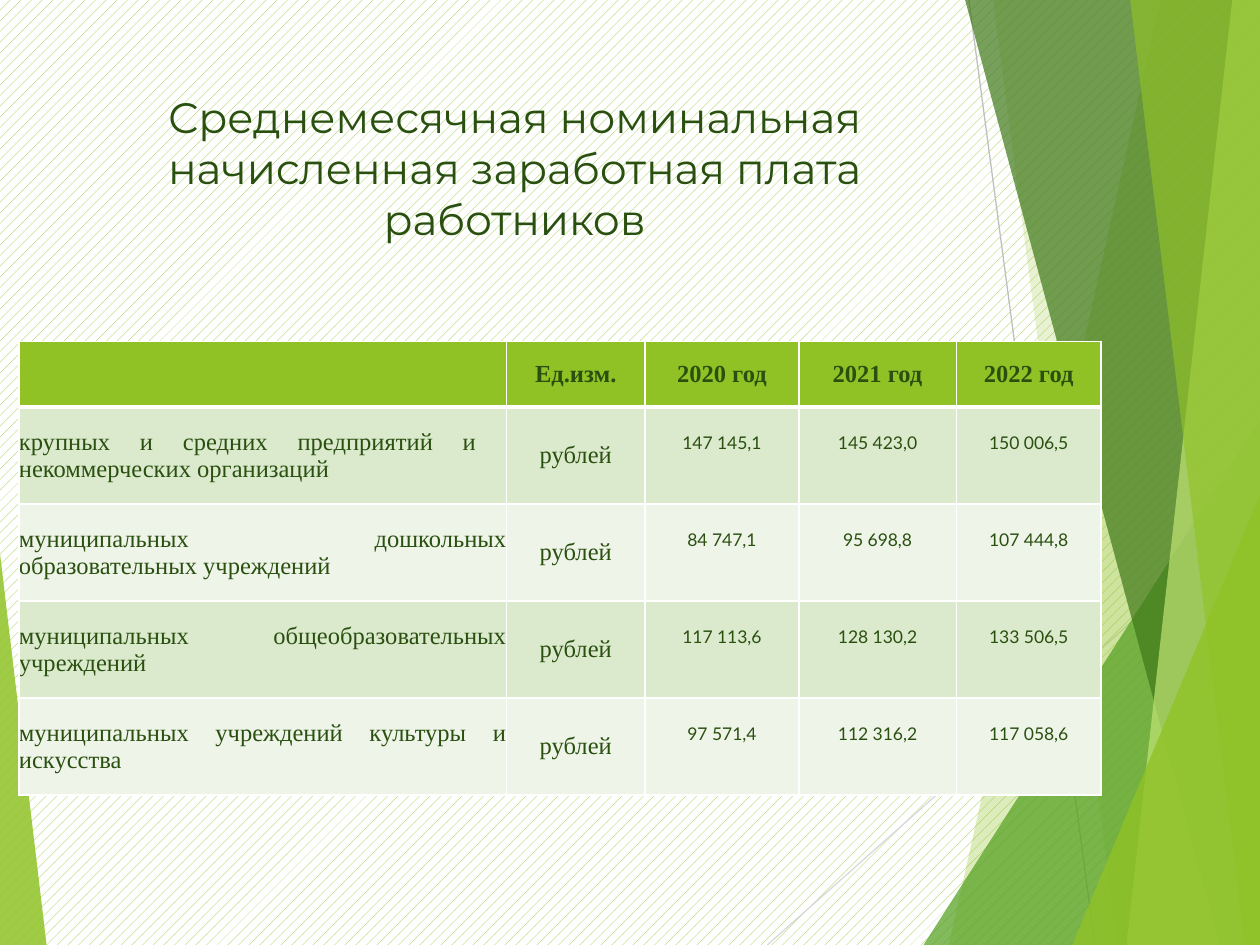
from dataclasses import dataclass

import pptx
import pptx.dml.color
import pptx.enum.dml
import pptx.enum.shapes
import pptx.enum.text
import pptx.oxml
import pptx.oxml.ns
import pptx.util
from pptx.util import Inches

ALIGN = pptx.enum.text.PP_ALIGN
ANCHOR = pptx.enum.text.MSO_ANCHOR
SERIF = "Times New Roman"
LIME, DARK_GREEN, WHITE = "90C226", "2A5010", "FFFFFF"
BAND_FILLS = ("DBE9CD", "EEF4E8")
SLIDE_WIDTH, SLIDE_HEIGHT = 10, 7.5


@dataclass
class Ray:
    start: tuple[float, float]
    end: tuple[float, float]
    color: str


@dataclass
class Panel:
    """A full-height facet reaching the right edge of the slide."""
    top_x: float
    bottom_x: float
    color: str
    opacity: int


@dataclass
class Wedge:
    """A right triangle standing on the bottom edge; apex 0 is left, 1 is right."""
    left: float
    top: float
    width: float
    apex: int
    color: str
    opacity: int


@dataclass
class WageRow:
    workers: str
    wages: tuple[str, str, str]
    right_inset: float = 0


DECOR = [
    Ray((7.69, 0), (8.69, 7.5), "BFBFBF"),
    Ray((10, 4.03), (6.09, 7.5), "D9D9D9"),
    Panel(9.21, 7.53, LIME, 30),
    Panel(7.88, 8.87, LIME, 20),
    Wedge(7.33, 3.33, 2.67, 1, "54A021", 72),
    Panel(7.66, 9.68, "3F7819", 70),
    Panel(9.78, 8.94, "C0E474", 70),
    Panel(8.97, 9.88, LIME, 65),
    Wedge(8.51, 3.93, 1.49, 1, LIME, 80),
    Wedge(0, 4.39, 0.37, 0, LIME, 85),
]

HEADINGS = ("", "Ед.изм.", "2020 год", "2021 год", "2022 год")
UNIT = "рублей"
COLUMN_WIDTHS = (3.87, 1.1, 1.22, 1.25, 1.15)
HEADER_HEIGHT, ROW_HEIGHT = 0.52, 0.77
WAGES = [
    WageRow("крупных и средних предприятий и некоммерческих организаций",
            ("147 145,1", "145 423,0", "150 006,5"), right_inset=0.24),
    WageRow("муниципальных дошкольных образовательных учреждений",
            ("84 747,1", "95 698,8", "107 444,8")),
    WageRow("муниципальных общеобразовательных учреждений",
            ("117 113,6", "128 130,2", "133 506,5")),
    WageRow("муниципальных учреждений культуры и искусства",
            ("97 571,4", "112 316,2", "117 058,6")),
]


def rgb(color: str) -> pptx.dml.color.RGBColor:
    return pptx.dml.color.RGBColor.from_string(color)


def paint(shape, color: str, opacity: int) -> None:
    shape.shadow.inherit = False
    shape.line.fill.background()
    shape.fill.solid()
    shape.fill.fore_color.rgb = rgb(color)
    srgb = shape.fill._xPr.find(".//" + pptx.oxml.ns.qn("a:srgbClr"))
    alpha = srgb.makeelement(pptx.oxml.ns.qn("a:alpha"), {"val": str(opacity * 1000)})
    srgb.append(alpha)


def draw_ray(slide, ray: Ray) -> None:
    line = slide.shapes.add_connector(
        pptx.enum.shapes.MSO_CONNECTOR.STRAIGHT,
        *(Inches(value) for value in ray.start + ray.end))
    line.line.color.rgb = rgb(ray.color)
    line.line.width = pptx.util.Pt(0.75)
    properties = line._element.spPr
    properties.append(properties.makeelement(pptx.oxml.ns.qn("a:effectLst"), {}))


def draw_panel(slide, panel: Panel) -> None:
    corners = [(panel.top_x, 0), (SLIDE_WIDTH, 0),
               (SLIDE_WIDTH, SLIDE_HEIGHT), (panel.bottom_x, SLIDE_HEIGHT)]
    points = [(Inches(x), Inches(y)) for x, y in corners]
    builder = slide.shapes.build_freeform(*points[0])
    builder.add_line_segments(points[1:], close=True)
    paint(builder.convert_to_shape(), panel.color, panel.opacity)


def draw_wedge(slide, wedge: Wedge) -> None:
    triangle = slide.shapes.add_shape(
        pptx.enum.shapes.MSO_SHAPE.ISOSCELES_TRIANGLE, Inches(wedge.left),
        Inches(wedge.top), Inches(wedge.width), Inches(SLIDE_HEIGHT - wedge.top))
    triangle.adjustments[0] = wedge.apex
    paint(triangle, wedge.color, wedge.opacity)


def write(frame, text: str, font: str, size: float, align, bold: bool = False) -> None:
    frame.text = text
    paragraph = frame.paragraphs[0]
    paragraph.alignment = align
    for run in paragraph.runs:
        run.font.name = font
        run.font.size = pptx.util.Pt(size)
        run.font.bold = bold
        run.font.color.rgb = rgb(DARK_GREEN)


def style_cell(cell, fill: str, bottom_width: float = 1) -> None:
    """Give the cell white borders, a plain fill and no insets."""
    properties = cell._tc.get_or_add_tcPr()
    for side, width in (("L", 1), ("R", 1), ("T", 1), ("B", bottom_width)):
        properties.append(pptx.oxml.parse_xml(
            f'<a:ln{side} {pptx.oxml.ns.nsdecls("a")} w="{pptx.util.Pt(width)}">'
            f'<a:solidFill><a:srgbClr val="{WHITE}"/></a:solidFill></a:ln{side}>'))
    cell.fill.solid()
    cell.fill.fore_color.rgb = rgb(fill)
    cell.vertical_anchor = ANCHOR.MIDDLE
    cell.margin_left = cell.margin_right = cell.margin_top = cell.margin_bottom = 0


def add_wage_table(slide) -> None:
    table = slide.shapes.add_table(
        len(WAGES) + 1, len(HEADINGS), Inches(0.15), Inches(2.71),
        Inches(sum(COLUMN_WIDTHS)), Inches(HEADER_HEIGHT + ROW_HEIGHT * len(WAGES))).table
    table.first_row = table.horz_banding = False
    for column, width in zip(table.columns, COLUMN_WIDTHS):
        column.width = Inches(width)
    table.rows[0].height = Inches(HEADER_HEIGHT)

    for column, heading in enumerate(HEADINGS):
        cell = table.cell(0, column)
        style_cell(cell, LIME, bottom_width=3)
        write(cell.text_frame, heading, SERIF, 14, ALIGN.CENTER, bold=True)

    for number, row in enumerate(WAGES, start=1):
        table.rows[number].height = Inches(ROW_HEIGHT)
        cells = list(table.rows[number].cells)
        for cell in cells:
            style_cell(cell, BAND_FILLS[(number - 1) % 2])
        workers, unit, *years = cells
        write(workers.text_frame, row.workers, SERIF, 14, ALIGN.JUSTIFY)
        workers.margin_right = Inches(row.right_inset)
        write(unit.text_frame, UNIT, SERIF, 14, ALIGN.CENTER)
        for cell, wage in zip(years, row.wages):
            write(cell.text_frame, wage, "Lato", 10, ALIGN.CENTER)
            cell.vertical_anchor = ANCHOR.TOP
            cell.margin_top = Inches(0.2)


def main() -> None:
    deck = pptx.Presentation()
    deck.slide_width, deck.slide_height = Inches(SLIDE_WIDTH), Inches(SLIDE_HEIGHT)
    slide = deck.slides.add_slide(deck.slide_layouts[6])

    backdrop = slide.background.fill
    backdrop.patterned()
    backdrop.pattern = pptx.enum.dml.MSO_PATTERN.PERCENT_20
    backdrop.fore_color.rgb = rgb(LIME)
    backdrop.back_color.rgb = rgb(WHITE)

    painters = {Ray: draw_ray, Panel: draw_panel, Wedge: draw_wedge}
    for part in DECOR:
        painters[type(part)](slide, part)

    title = slide.shapes.add_textbox(
        Inches(0.56), Inches(0.67), Inches(7.05), Inches(1.44)).text_frame
    title.word_wrap = True
    write(title, "Среднемесячная номинальная начисленная заработная плата работников",
          "Montserrat", 24.3, ALIGN.CENTER)
    add_wage_table(slide)
    deck.save("out.pptx")


if __name__ == "__main__":
    main()
